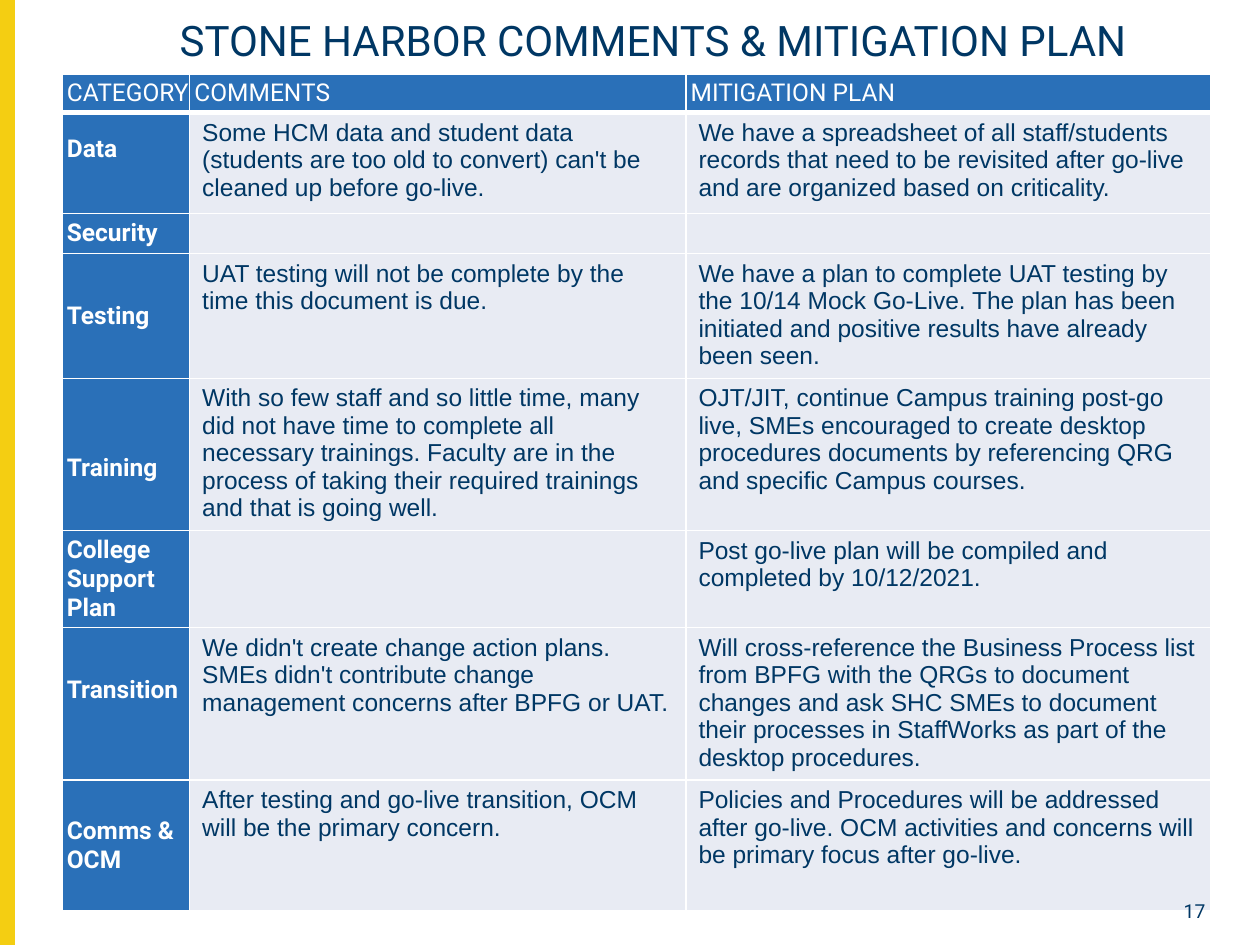
from dataclasses import dataclass

import pptx
import pptx.dml.color
import pptx.enum.shapes
import pptx.enum.text
import pptx.oxml
import pptx.oxml.ns
import pptx.util

Pt = pptx.util.Pt
Align = pptx.enum.text.PP_ALIGN
Anchor = pptx.enum.text.MSO_ANCHOR


@dataclass(frozen=True)
class Theme:
    navy: str = "003764"
    blue: str = "2A70B8"
    pale: str = "E8EBF3"
    yellow: str = "F4CE12"
    white: str = "FFFFFF"
    heading_font: str = "Roboto"
    body_font: str = "Arial"
    title_size: float = 24
    table_size: float = 14
    number_size: float = 11


@dataclass(frozen=True)
class PlanRow:
    height: float
    category: str
    comments: str
    mitigation: str
    label_top: float = 0
    label_bottom: float = 0


THEME = Theme()
HEADERS = ("CATEGORY", "COMMENTS", "MITIGATION PLAN")
HEADER_HEIGHT = 21.6
COLUMN_WIDTHS = (72.9, 283.6, 299.8)
PLAN = (
    PlanRow(57.6, "Data",
            "Some HCM data and student data (students are too old to convert) "
            "can't be cleaned up before go-live.",
            "We have a spreadsheet of all staff/students records that need to be "
            "revisited after go-live and are organized based on criticality.",
            label_bottom=16),
    PlanRow(23, "Security", "", ""),
    PlanRow(71.3, "Testing",
            "UAT testing will not be complete by the time this document is due.",
            "We have a plan to complete UAT testing by the 10/14 Mock Go-Live. The "
            "plan has been initiated and positive results have already been seen."),
    PlanRow(87.1, "Training",
            "With so few staff and so little time, many did not have time to complete "
            "all necessary trainings. Faculty are in the process of taking their "
            "required trainings and that is going well.",
            "OJT/JIT, continue Campus training post-go live, SMEs encouraged to create "
            "desktop procedures documents by referencing QRG and specific Campus "
            "courses.",
            label_top=16),
    PlanRow(55.4, "College Support Plan", "",
            "Post go-live plan will be compiled and completed by 10/12/2021."),
    PlanRow(87.1, "Transition",
            "We didn't create change action plans. SMEs didn't contribute change "
            "management concerns after BPFG or UAT.",
            "Will cross-reference the Business Process list from BPFG with the QRGs to "
            "document changes and ask SHC SMEs to document their processes in "
            "StaffWorks as part of the desktop procedures.",
            label_bottom=16),
    PlanRow(74.9, "Comms & OCM",
            "After testing and go-live transition, OCM will be the primary concern.",
            "Policies and Procedures will be addressed after go-live. OCM activities "
            "and concerns will be primary focus after go-live."),
)


def rgb(color: str) -> pptx.dml.color.RGBColor:
    return pptx.dml.color.RGBColor.from_string(color)


def apply(target, values: dict) -> None:
    for name, value in values.items():
        setattr(target, name, value)


def write(tf, text: str, font: str, size: float, color: str,
          bold: bool = False, align=Align.LEFT) -> None:
    p = tf.paragraphs[0]
    p.alignment = align
    r = p.add_run()
    r.text = text
    apply(r.font, {"name": font, "size": Pt(size), "bold": bold})
    r.font.color.rgb = rgb(color)


def set_borders(cell, bottom: float = 1) -> None:
    """Give the cell white edges, placed ahead of its fill as the schema asks."""
    tc_pr = cell._tc.get_or_add_tcPr()
    edges = {"lnL": 1, "lnR": 1, "lnT": 1, "lnB": bottom}
    for i, (tag, width) in enumerate(edges.items()):
        tc_pr.insert(i, pptx.oxml.parse_xml(
            f'<a:{tag} {pptx.oxml.ns.nsdecls("a")} w="{Pt(width)}"><a:solidFill>'
            f'<a:srgbClr val="{THEME.white}"/></a:solidFill></a:{tag}>'))


def fill_cell(cell, color: str, bottom: float = 1) -> None:
    cell.fill.solid()
    cell.fill.fore_color.rgb = rgb(color)
    set_borders(cell, bottom)


def draw_label(cell, text: str, bold: bool = True, top: float = 0,
               bottom: float = 0, border: float = 1) -> None:
    fill_cell(cell, THEME.blue, border)
    apply(cell, {"vertical_anchor": Anchor.MIDDLE, "margin_left": Pt(2.7),
                 "margin_right": 0, "margin_top": Pt(top),
                 "margin_bottom": Pt(bottom)})
    write(cell.text_frame, text, THEME.heading_font, THEME.table_size,
          THEME.white, bold)


def draw_note(cell, text: str) -> None:
    fill_cell(cell, THEME.pale)
    if text:
        write(cell.text_frame, text, THEME.body_font, THEME.table_size, THEME.navy)
    else:
        apply(cell, {"margin_top": 0, "margin_bottom": 0})


def draw_table(slide) -> None:
    heights = [HEADER_HEIGHT] + [row.height for row in PLAN]
    table = slide.shapes.add_table(
        len(heights), len(HEADERS), Pt(35.5), Pt(42.7),
        Pt(sum(COLUMN_WIDTHS)), Pt(sum(heights))).table
    for column, width in zip(table.columns, COLUMN_WIDTHS):
        column.width = Pt(width)
    for table_row, height in zip(table.rows, heights):
        table_row.height = Pt(height)
    for i, header in enumerate(HEADERS):
        draw_label(table.cell(0, i), header, bold=False, border=3)
    for i, row in enumerate(PLAN, 1):
        draw_label(table.cell(i, 0), row.category, top=row.label_top,
                   bottom=row.label_bottom)
        draw_note(table.cell(i, 1), row.comments)
        draw_note(table.cell(i, 2), row.mitigation)


def draw_side_bar(slide) -> None:
    sp = slide.shapes.add_shape(pptx.enum.shapes.MSO_SHAPE.RECTANGLE,
                                0, 0, Pt(8), Pt(540))
    sp.shadow.inherit = False
    sp.fill.solid()
    sp.fill.fore_color.rgb = rgb(THEME.yellow)
    sp.line.color.rgb = rgb(THEME.yellow)
    sp.line.width = Pt(1)


def draw_title(slide) -> None:
    sp = slide.shapes.title
    apply(sp, {"left": Pt(35.5), "top": Pt(7.4), "width": Pt(675.4), "height": Pt(34.6)})
    tf = sp.text_frame
    apply(tf, {"auto_size": pptx.enum.text.MSO_AUTO_SIZE.NONE, "word_wrap": True,
               "vertical_anchor": Anchor.MIDDLE})
    write(tf, "STONE HARBOR COMMENTS & MITIGATION PLAN", THEME.heading_font,
          THEME.title_size, THEME.navy, align=Align.CENTER)
    tf.paragraphs[0].line_spacing = 0.9


def draw_page_number(slide) -> None:
    sp = slide.shapes.add_textbox(Pt(661.7), Pt(510.5), Pt(36.7), Pt(18.7))
    tf = sp.text_frame
    apply(tf, {"word_wrap": True, "margin_right": Pt(9.6)})
    write(tf, "17", THEME.heading_font, THEME.number_size, THEME.navy,
          align=Align.RIGHT)


def main() -> None:
    prs = pptx.Presentation()
    apply(prs, {"slide_width": Pt(720), "slide_height": Pt(540)})
    slide = prs.slides.add_slide(prs.slide_layouts.get_by_name("Title Only"))
    draw_side_bar(slide)
    draw_table(slide)
    draw_page_number(slide)
    draw_title(slide)
    prs.save("out.pptx")


if __name__ == "__main__":
    main()
